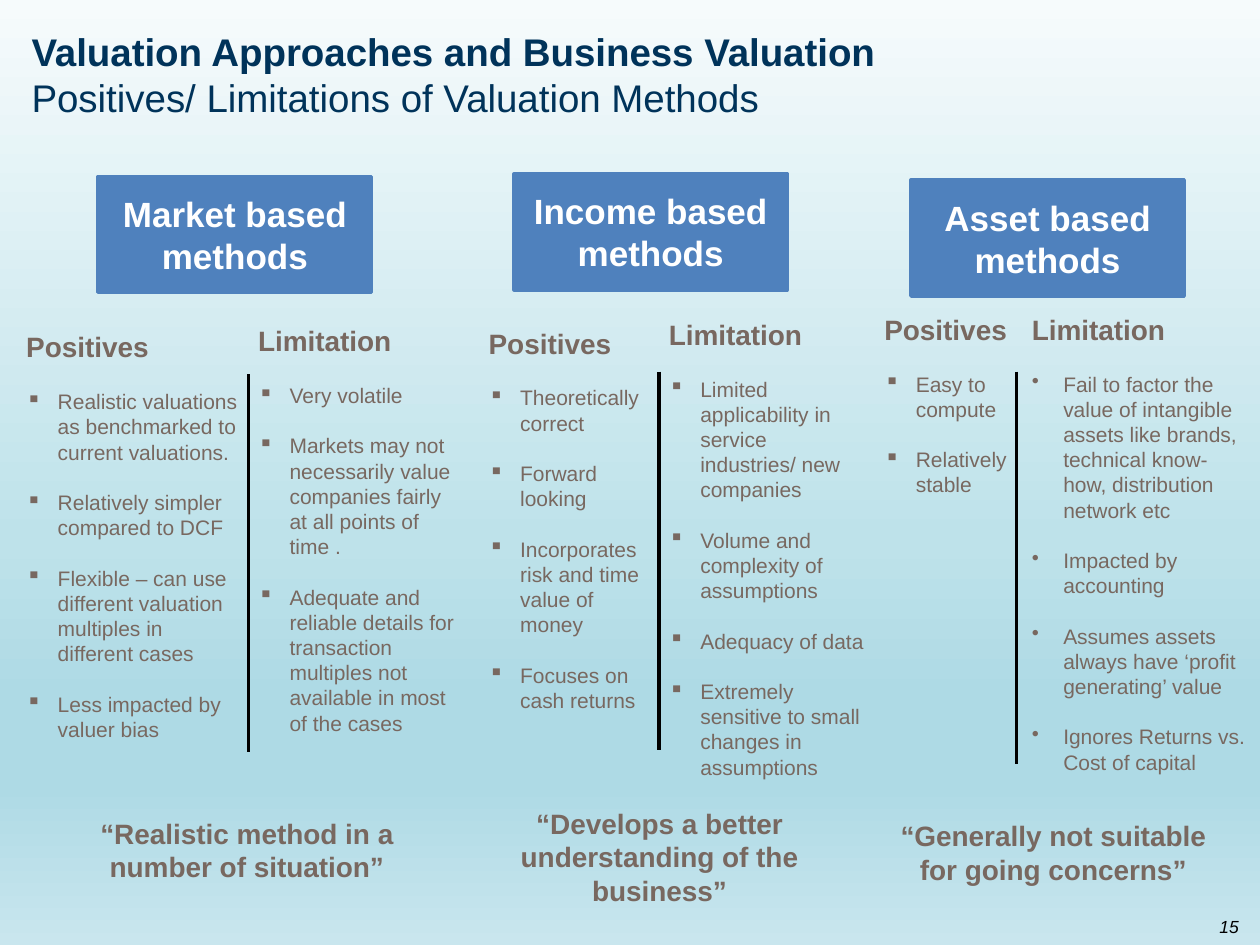
import pptx
import pptx.util
import pptx.dml.color
import pptx.enum.shapes
import pptx.enum.text
import pptx.oxml
import pptx.oxml.ns
import lxml.etree

Inches = pptx.util.Inches
Pt = pptx.util.Pt
ALIGN = pptx.enum.text.PP_ALIGN
MID = pptx.enum.text.MSO_ANCHOR.MIDDLE
FIT = pptx.enum.text.MSO_AUTO_SIZE
COLORS = {"navy": "00335A", "blue": "4F81BD", "white": "FFFFFF", "text": "786860", "black": "000000"}
STOPS = [(0, "F6FBFC"), (57, "BEE2EA"), (74, "AEDAE5"), (83, "AEDAE5"), (100, "C9E6EE")]
GROUPS = [
    {"name": "Market based methods", "box": (0.78, 1.4), "rule": (1.97, 2.97, 5.97),
     "lists": [
         ("Positives", (0.11, 2.57, 1.88, 3.57), "▪", [
             "Realistic valuations as benchmarked to current valuations.",
             "Relatively simpler compared to DCF",
             "Flexible – can use different valuation multiples in different cases",
             "Less impacted by valuer bias"]),
         ("Limitation", (1.95, 2.52, 1.78, 3.57), "▪", [
             "Very volatile",
             "Markets may not necessarily value companies fairly at all points of time .",
             "Adequate and reliable details for transaction multiples not available in most of the cases"])],
     "quote": ("“Realistic method in a number of situation”", (0.5, 6.43, 2.92, 0.64))},
    {"name": "Income based methods", "box": (4.08, 1.38), "rule": (5.23, 2.95, 5.95),
     "lists": [
         ("Positives", (3.78, 2.54, 1.51, 3.2), "▪", [
             "Theoretically correct", "Forward looking",
             "Incorporates risk and time value of money", "Focuses on cash returns"]),
         ("Limitation", (5.21, 2.47, 1.78, 3.6), "▪", [
             "Limited applicability in service industries/ new companies",
             "Volume and complexity of assumptions", "Adequacy of data",
             "Extremely sensitive to small changes in assumptions"])],
     "quote": ("“Develops a better understanding of the business”", (3.5, 6.35, 3.47, 0.91))},
    {"name": "Asset based methods", "box": (7.23, 1.43), "rule": (8.07, 2.95, 6.06),
     "lists": [
         ("Positives", (6.92, 2.43, 1.25, 1.57), "▪", ["Easy to compute", "Relatively stable"]),
         ("Limitation", (8.09, 2.43, 1.91, 4.01), "•", [
             "Fail to factor the value of intangible assets like brands, technical know- how, distribution network etc",
             "Impacted by accounting",
             "Assumes assets always have ‘profit generating’ value",
             "Ignores Returns vs. Cost of capital"])],
     "quote": ("“Generally not suitable for going concerns”", (6.9, 6.45, 2.92, 0.64))},
]


class Deck:
    """Holds the style and the current slide, and draws each kind of element."""

    def __init__(self, show):
        self.face = "Arial"
        self.slide = show.slides.add_slide(show.slide_layouts[5])

    def color(self, name):
        return pptx.dml.color.RGBColor.from_string(COLORS[name])

    def ground(self, stops):
        fill = self.slide.background.fill
        fill.gradient()
        fill.gradient_angle = 270
        qn = pptx.oxml.ns.qn
        row = next(self.slide.background._cSld.iter(qn("a:gsLst")))
        for old in list(row):
            row.remove(old)
        for place, tone in stops:
            stop = lxml.etree.SubElement(row, qn("a:gs"), pos=str(place * 1000))
            lxml.etree.SubElement(stop, qn("a:srgbClr"), val=tone)

    def style(self, para, text, size, tone, bold=False, align=ALIGN.LEFT):
        para.text = text
        para.alignment = align
        font = para.font
        font.name, font.size, font.bold = self.face, Pt(size), bold
        font.color.rgb = self.color(tone)

    def title(self, lines, area):
        shape = self.slide.shapes.title
        shape.left, shape.top, shape.width, shape.height = map(Inches, area)
        frame = shape.text_frame
        frame.auto_size, frame.vertical_anchor = FIT.NONE, MID
        for i, line in enumerate(lines):
            para = frame.add_paragraph() if i else frame.paragraphs[0]
            self.style(para, line, 22, "navy", i == 0)

    def text(self, text, area, size, tone, bold=False, align=ALIGN.LEFT):
        frame = self.slide.shapes.add_textbox(*map(Inches, area)).text_frame
        frame.word_wrap = True
        frame.auto_size = FIT.SHAPE_TO_FIT_TEXT
        self.style(frame.paragraphs[0], text, size, tone, bold, align)
        return frame

    def number(self, text, area):
        frame = self.text(text, area, 10, "black", align=ALIGN.RIGHT)
        frame.auto_size, frame.vertical_anchor = FIT.NONE, MID
        frame.paragraphs[0].font.italic = True

    def list(self, head, area, mark, items):
        frame = self.text(head, area, 16, "text", True)
        for item in items:
            para = frame.add_paragraph()
            props = para._p.get_or_add_pPr()
            props.set("marL", str(Inches(0.25)))
            props.set("indent", str(-Inches(0.25)))
            lxml.etree.SubElement(props, pptx.oxml.ns.qn("a:buChar"), char=mark)
            para.space_before = Pt(14.4)
            self.style(para, item, 12, "text")

    def box(self, text, left, top):
        kind = pptx.enum.shapes.MSO_SHAPE.RECTANGLE
        shape = self.slide.shapes.add_shape(kind, *map(Inches, (left, top, 2.17, 0.92)))
        shape.shadow.inherit = False
        shape.fill.solid()
        shape.fill.fore_color.rgb = shape.line.color.rgb = self.color("blue")
        shape.line.width = Pt(2)
        shape.text_frame.vertical_anchor = MID
        self.style(shape.text_frame.paragraphs[0], text, 20, "white", True, ALIGN.CENTER)

    def rule(self, x, top, base):
        kind = pptx.enum.shapes.MSO_CONNECTOR.STRAIGHT
        line = self.slide.shapes.add_connector(kind, *map(Inches, (x, top, x, base)))
        line.line.color.rgb = self.color("black")
        line.line.width = Pt(1.75)
        lxml.etree.SubElement(line._element.spPr, pptx.oxml.ns.qn("a:effectLst"))


def main():
    show = pptx.Presentation()
    show.slide_width, show.slide_height = Inches(10), Inches(7.5)
    deck = Deck(show)
    deck.ground(STOPS)
    deck.title(["Valuation Approaches and Business Valuation",
                "Positives/ Limitations of Valuation Methods"], (0.15, 0.04, 9.69, 1.1))
    deck.number("15", (7.6, 7.15, 2.33, 0.4))
    for group in GROUPS:
        deck.box(group["name"], *group["box"])
        for part in group["lists"]:
            deck.list(*part)
        quote, area = group["quote"]
        deck.text(quote, area, 16, "text", True, ALIGN.CENTER)
        deck.rule(*group["rule"])
    show.save("out.pptx")


if __name__ == "__main__":
    main()
